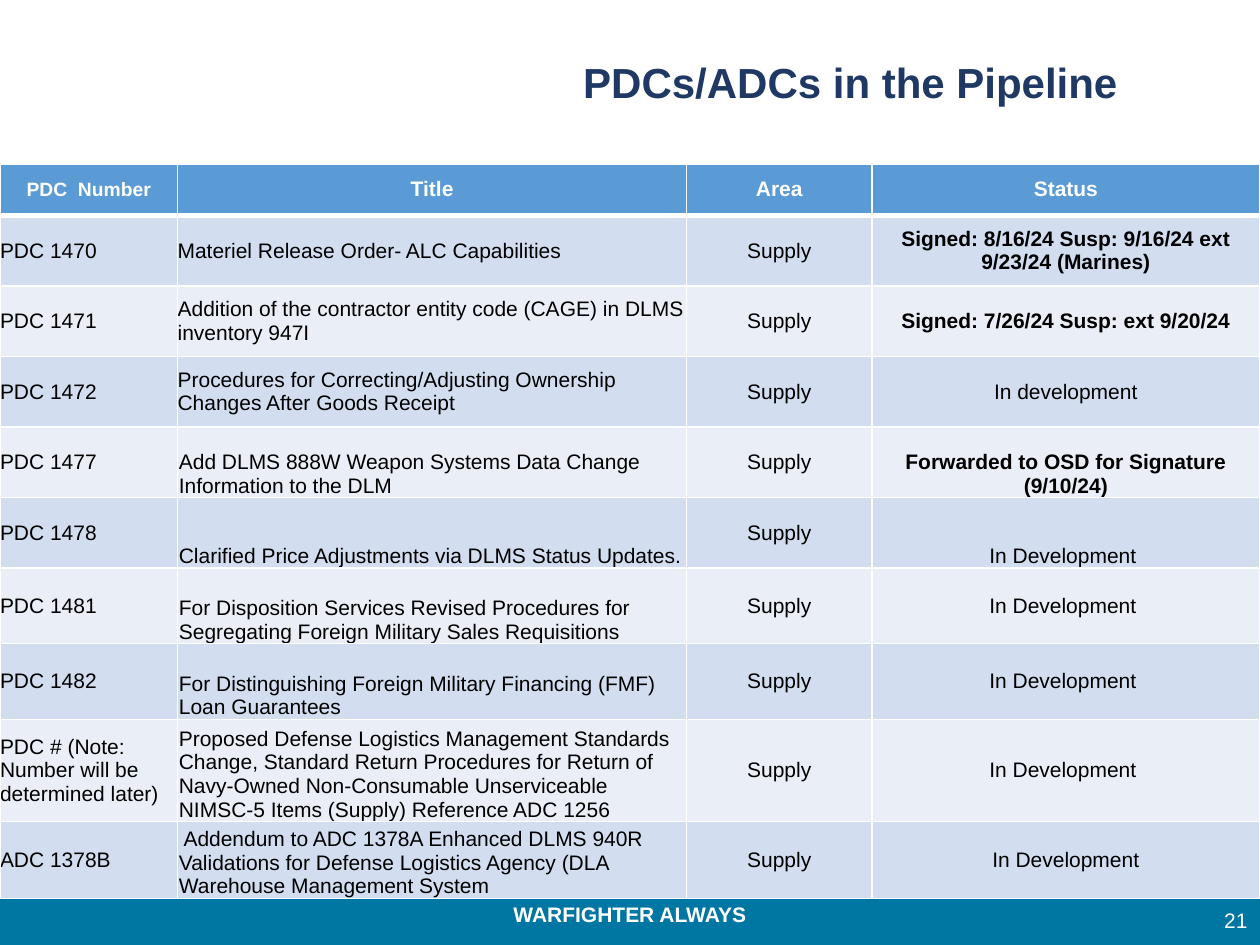
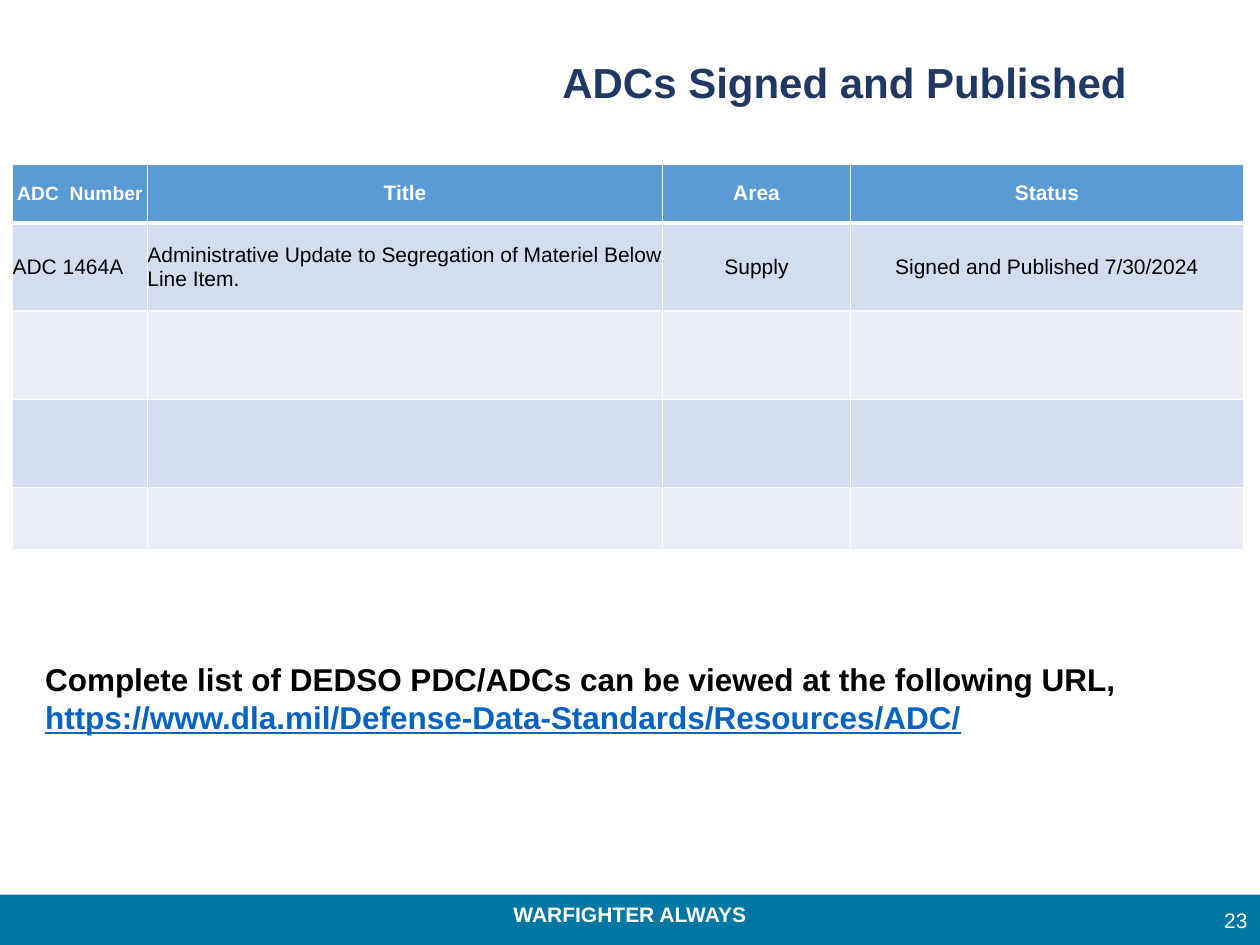
from dataclasses import dataclass

from lxml import etree
from pptx import Presentation
from pptx import util as u
from pptx.dml import color
from pptx.enum import shapes, text
from pptx.oxml import ns

EMU_PER_PX = 9144


@dataclass(frozen=True)
class Theme:
    font: str = "Arial"
    white: str = "FFFFFF"
    black: str = "000000"
    band: str = "0076A3"
    title: str = "203864"
    link: str = "0563C1"
    header: str = "5B9BD5"
    stripes: tuple[str, str] = ("D2DEEF", "EAEFF7")
    title_size: int = 24
    note_size: int = 18
    body_size: int = 12
    small_size: int = 11
    rule: int = 1
    header_rule: int = 3


THEME = Theme()
CENTER = text.PP_ALIGN.CENTER
LEFT = text.PP_ALIGN.LEFT
RIGHT = text.PP_ALIGN.RIGHT
MIDDLE = text.MSO_ANCHOR.MIDDLE
BOTTOM = text.MSO_ANCHOR.BOTTOM
TOP = text.MSO_ANCHOR.TOP


@dataclass(frozen=True)
class Box:
    left: int
    top: int
    width: int
    height: int

    def emu(self) -> tuple[int, int, int, int]:
        return px(self.left), px(self.top), px(self.width), px(self.height)


@dataclass(frozen=True)
class Run:
    words: str
    size: int = THEME.body_size
    color: str = THEME.black
    bold: bool = False
    underline: bool = False


@dataclass(frozen=True)
class Change:
    number: str
    title: str
    status: str
    area: str = "Supply"
    status_bold: bool = False
    title_anchor: text.MSO_ANCHOR = MIDDLE
    status_anchor: text.MSO_ANCHOR = MIDDLE


@dataclass(frozen=True)
class ChangeTable:
    kind: str
    left: int
    columns: tuple[int, ...]
    rows: tuple[int, ...]
    changes: tuple[Change, ...]


TITLE_BOX = Box(400, 40, 550, 90)
BAND_BOX = Box(0, 710, 1000, 40)
MOTTO_BOX = Box(0, 711, 1000, 30)
NUMBER_BOX = Box(950, 710, 50, 40)
NOTE_BOX = Box(26, 519, 900, 101)
TABLE_TOP = 130

PIPELINE = ChangeTable("PDC", 0, (141, 404, 147, 308), (41, *[56] * 5, *[60] * 4), (
    Change("PDC 1470", "Materiel Release Order- ALC Capabilities",
           "Signed: 8/16/24 Susp: 9/16/24 ext 9/23/24 (Marines)", status_bold=True),
    Change("PDC 1471", "Addition of the contractor entity code (CAGE) in DLMS inventory 947I",
           "Signed: 7/26/24 Susp: ext 9/20/24", status_bold=True),
    Change("PDC 1472", "Procedures for Correcting/Adjusting Ownership Changes After Goods Receipt",
           "In development"),
    Change("PDC 1477", "Add DLMS 888W Weapon Systems Data Change Information to the DLM",
           "Forwarded to OSD for Signature (9/10/24)", status_bold=True,
           title_anchor=BOTTOM, status_anchor=BOTTOM),
    Change("PDC 1478", "Clarified Price Adjustments via DLMS Status Updates.",
           "In Development ", title_anchor=BOTTOM, status_anchor=BOTTOM),
    Change("PDC 1481", "For Disposition Services Revised Procedures for Segregating "
           "Foreign Military Sales Requisitions", "In Development ", title_anchor=BOTTOM),
    Change("PDC 1482", "For Distinguishing Foreign Military Financing (FMF) Loan Guarantees",
           "In Development ", title_anchor=BOTTOM),
    Change("PDC # (Note: Number will be determined later)",
           "Proposed Defense Logistics Management Standards Change, Standard Return Procedures "
           "for Return of Navy-Owned Non-Consumable Unserviceable NIMSC-5 Items (Supply) "
           "Reference ADC 1256", "In Development ", title_anchor=BOTTOM),
    Change("ADC 1378B", " Addendum to ADC 1378A Enhanced DLMS 940R Validations for "
           "Defense Logistics Agency (DLA Warehouse Management System",
           "In Development", title_anchor=BOTTOM),
))

PUBLISHED = ChangeTable("ADC", 10, (107, 409, 149, 312), (47, 70, 70, 70, 49), (
    Change("ADC 1464A", "Administrative Update to Segregation of Materiel Below Line Item.",
           "Signed and Published 7/30/2024"),
))


def px(length: int) -> int:
    return u.Emu(length * EMU_PER_PX)


def rgb(value: str) -> color.RGBColor:
    return color.RGBColor.from_string(value)


def write(paragraph, runs: list[Run], align: text.PP_ALIGN) -> None:
    paragraph.alignment = align
    for item in runs:
        run = paragraph.add_run()
        run.text = item.words
        run.font.name = THEME.font
        run.font.size = u.Pt(item.size)
        run.font.bold = item.bold
        run.font.underline = item.underline
        run.font.color.rgb = rgb(item.color)


def add_text(slide, box: Box, runs: list[Run], align: text.PP_ALIGN = CENTER,
             anchor: text.MSO_ANCHOR = TOP) -> None:
    frame = slide.shapes.add_textbox(*box.emu()).text_frame
    frame.word_wrap = True
    frame.vertical_anchor = anchor
    write(frame.paragraphs[0], runs, align)


def add_base(presentation, title: str, number: int):
    slide = presentation.slides.add_slide(presentation.slide_layouts[6])
    band = slide.shapes.add_shape(shapes.MSO_SHAPE.RECTANGLE, *BAND_BOX.emu())
    band.shadow.inherit = False
    band.fill.solid()
    band.fill.fore_color.rgb = rgb(THEME.band)
    band.line.fill.background()
    add_text(slide, MOTTO_BOX, [Run("WARFIGHTER ALWAYS", color=THEME.white, bold=True)])
    add_text(slide, TITLE_BOX, [Run(title, THEME.title_size, THEME.title, True)])
    add_text(slide, NUMBER_BOX, [Run(str(number), color=THEME.white)], RIGHT, MIDDLE)
    return slide


def paint_cell(cell, fill: str, top: int, bottom: int) -> None:
    properties = cell._tc.get_or_add_tcPr()
    widths = {"lnL": THEME.rule, "lnR": THEME.rule, "lnT": top, "lnB": bottom}
    for side, width in widths.items():
        line = etree.SubElement(properties, ns.qn(f"a:{side}"), w=str(u.Pt(width)))
        solid = etree.SubElement(line, ns.qn("a:solidFill"))
        etree.SubElement(solid, ns.qn("a:srgbClr"), val=THEME.white)
    cell.fill.solid()
    cell.fill.fore_color.rgb = rgb(fill)


def fill_cell(cell, run: Run, align: text.PP_ALIGN = CENTER,
              anchor: text.MSO_ANCHOR = MIDDLE) -> None:
    inset = px(1 if anchor == BOTTOM else 0)
    cell.margin_left = cell.margin_right = cell.margin_top = inset
    cell.margin_bottom = 0
    cell.vertical_anchor = anchor
    write(cell.text_frame.paragraphs[0], [run], align)


def add_change_table(slide, data: ChangeTable) -> None:
    box = Box(data.left, TABLE_TOP, sum(data.columns), sum(data.rows))
    table = slide.shapes.add_table(len(data.rows), len(data.columns), *box.emu()).table
    for column, width in zip(table.columns, data.columns):
        column.width = px(width)
    for index, (row, height) in enumerate(zip(table.rows, data.rows)):
        row.height = px(height)
        fill = THEME.stripes[(index - 1) % 2] if index else THEME.header
        top = THEME.header_rule if index == 1 else THEME.rule
        bottom = THEME.header_rule if index == 0 else THEME.rule
        for cell in row.cells:
            paint_cell(cell, fill, top, bottom)

    headings = (f"{data.kind}  Number", "Title", "Area", "Status")
    for index, heading in enumerate(headings):
        size = THEME.body_size if index else THEME.small_size
        fill_cell(table.cell(0, index), Run(heading, size, THEME.white, True))
    for index, change in enumerate(data.changes, 1):
        number, title, area, status = table.rows[index].cells
        fill_cell(number, Run(change.number), LEFT)
        fill_cell(title, Run(change.title), LEFT, change.title_anchor)
        fill_cell(area, Run(change.area))
        fill_cell(status, Run(change.status, bold=change.status_bold),
                  anchor=change.status_anchor)


def main() -> None:
    presentation = Presentation()
    presentation.slide_width = px(1000)
    presentation.slide_height = px(750)

    pipeline = add_base(presentation, "PDCs/ADCs in the Pipeline", 21)
    add_change_table(pipeline, PIPELINE)

    published = add_base(presentation, "ADCs Signed and Published ", 23)
    add_change_table(published, PUBLISHED)
    add_text(published, NOTE_BOX, [
        Run("Complete list of DEDSO PDC/ADCs can be viewed at the following URL, ",
            THEME.note_size, bold=True),
        Run("https://www.dla.mil/Defense-Data-Standards/Resources/ADC/",
            THEME.note_size, THEME.link, True, True),
    ], LEFT)

    presentation.save("out.pptx")


if __name__ == "__main__":
    main()
